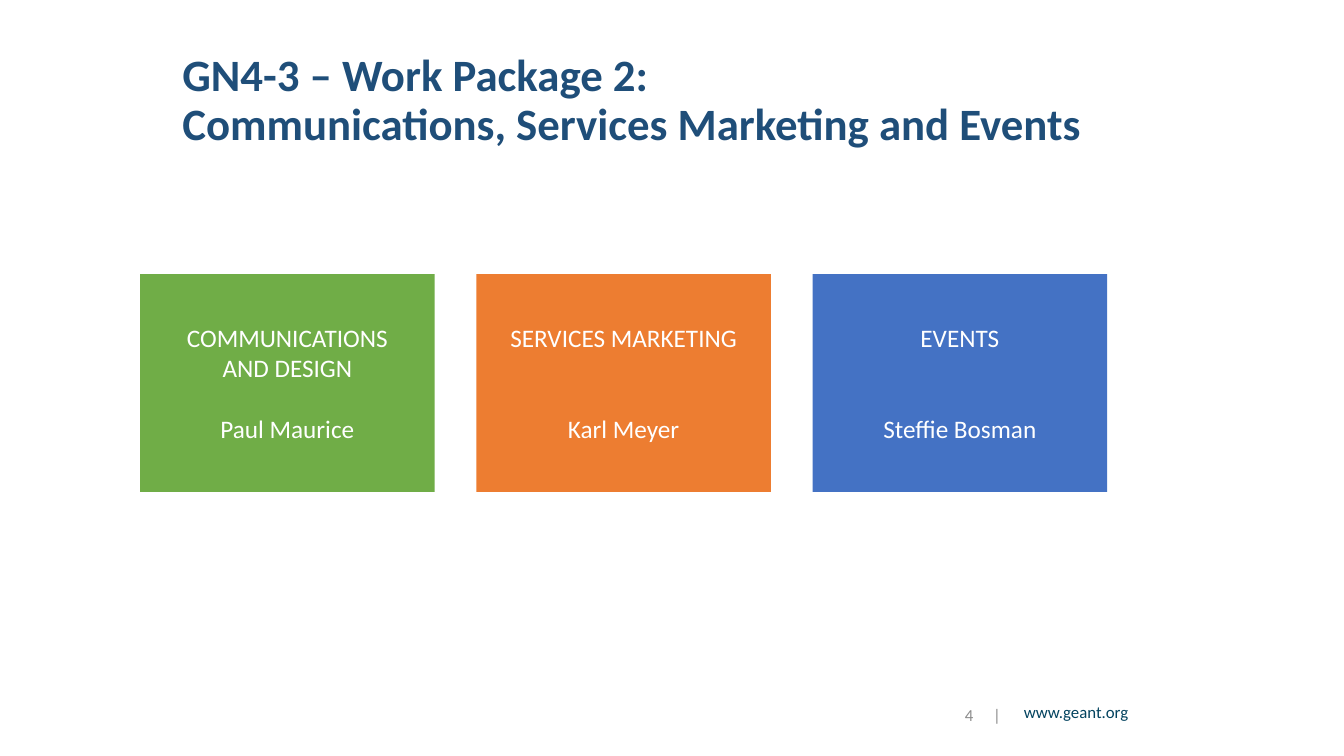
from dataclasses import dataclass
from pptx import Presentation
from pptx.dml.color import RGBColor as RGB
from pptx.enum.shapes import MSO_SHAPE as Shape
from pptx.enum.text import MSO_ANCHOR as Anchor, PP_ALIGN as Align
from pptx.oxml import parse_xml
from pptx.oxml.ns import nsdecls
from pptx.util import Inches, Pt


@dataclass(frozen=True)
class Theme:
    font: str = "Calibri"
    navy: str = "1F4E79"
    teal: str = "03435F"
    gray: str = "8C8C8C"
    white: str = "FFFFFF"
    green: str = "70AD47"
    orange: str = "ED7D31"
    blue: str = "4472C4"
    head: int = 32
    body: int = 18
    foot: int = 12
    line: float = 1.22  # line height as a share of the type size


def write(frame, text, *, font, size, color, bold=False, align=Align.LEFT,
          space=None, gap=0, tab=None, first=True):
    """Put one paragraph into a text frame."""
    para = frame.paragraphs[0] if first else frame.add_paragraph()
    para.alignment = align
    if space:
        para.line_spacing = space
    if gap:
        para.space_before = Pt(gap)
    if tab:
        para._p.get_or_add_pPr().append(parse_xml(
            f'<a:tabLst {nsdecls("a")}><a:tab pos="{Inches(tab)}" algn="l"/></a:tabLst>'))
    para.text = text
    for run in para.runs:
        run.font.name = font
        run.font.size = Pt(size)
        run.font.bold = bold
        run.font.color.rgb = RGB.from_string(color)


class Deck:
    def __init__(self, theme):
        self.theme = theme
        self.file = Presentation()
        self.file.slide_width = Inches(13.33)
        self.file.slide_height = Inches(7.5)
        self.slide = self.file.slides.add_slide(self.file.slide_layouts[6])

    def label(self, text, area, anchor=Anchor.TOP, inset=0.1, **style):
        box = self.slide.shapes.add_textbox(*map(Inches, area))
        frame = box.text_frame
        frame.word_wrap = True
        frame.vertical_anchor = anchor
        frame.margin_left = frame.margin_right = Inches(inset)
        write(frame, text, font=self.theme.font, **style)

    def card(self, lines, name, area, fill, rows=4):
        """A filled box: heading at the top, name on the last of its rows."""
        theme = self.theme
        box = self.slide.shapes.add_shape(Shape.RECTANGLE, *map(Inches, area))
        box.shadow.inherit = False
        box.fill.solid()
        box.fill.fore_color.rgb = RGB.from_string(fill)
        box.line.fill.background()
        frame = box.text_frame
        frame.word_wrap = True
        frame.vertical_anchor = Anchor.MIDDLE
        style = dict(font=theme.font, size=theme.body, color=theme.white,
                     align=Align.CENTER)
        for i, text in enumerate(lines):
            write(frame, text, first=i == 0, **style)
        blank = rows - len(lines) - 1
        write(frame, name, first=False,
              gap=round(blank * theme.body * theme.line), **style)


def main():
    theme = Theme()
    deck = Deck(theme)

    # Title
    deck.label("GN4-3 – Work Package 2:\nCommunications, Services Marketing and Events",
               (1.71, 0.77, 10.82, 0.47), Anchor.MIDDLE, size=theme.head,
               color=theme.navy, bold=True, space=0.9)

    # Team cards
    teams = [
        (["COMMUNICATIONS", "AND DESIGN"], "Paul Maurice", theme.green),
        (["SERVICES MARKETING"], "Karl Meyer", theme.orange),
        (["EVENTS"], "Steffie Bosman", theme.blue),
    ]
    left, top, wide, high, step = 1.39, 2.72, 2.92, 2.16, 3.335
    for i, (lines, name, fill) in enumerate(teams):
        deck.card(lines, name, (left + i * step, top, wide, high), fill)

    # Footer
    deck.label("www.geant.org", (9.61, 6.91, 1.68, 0.36), size=theme.foot,
               color=theme.teal, align=Align.RIGHT)
    deck.label("4\t|", (9.57, 6.91, 0.45, 0.36), Anchor.MIDDLE, inset=0,
               size=theme.foot, color=theme.gray, tab=0.28)

    deck.file.save("out.pptx")


if __name__ == "__main__":
    main()
